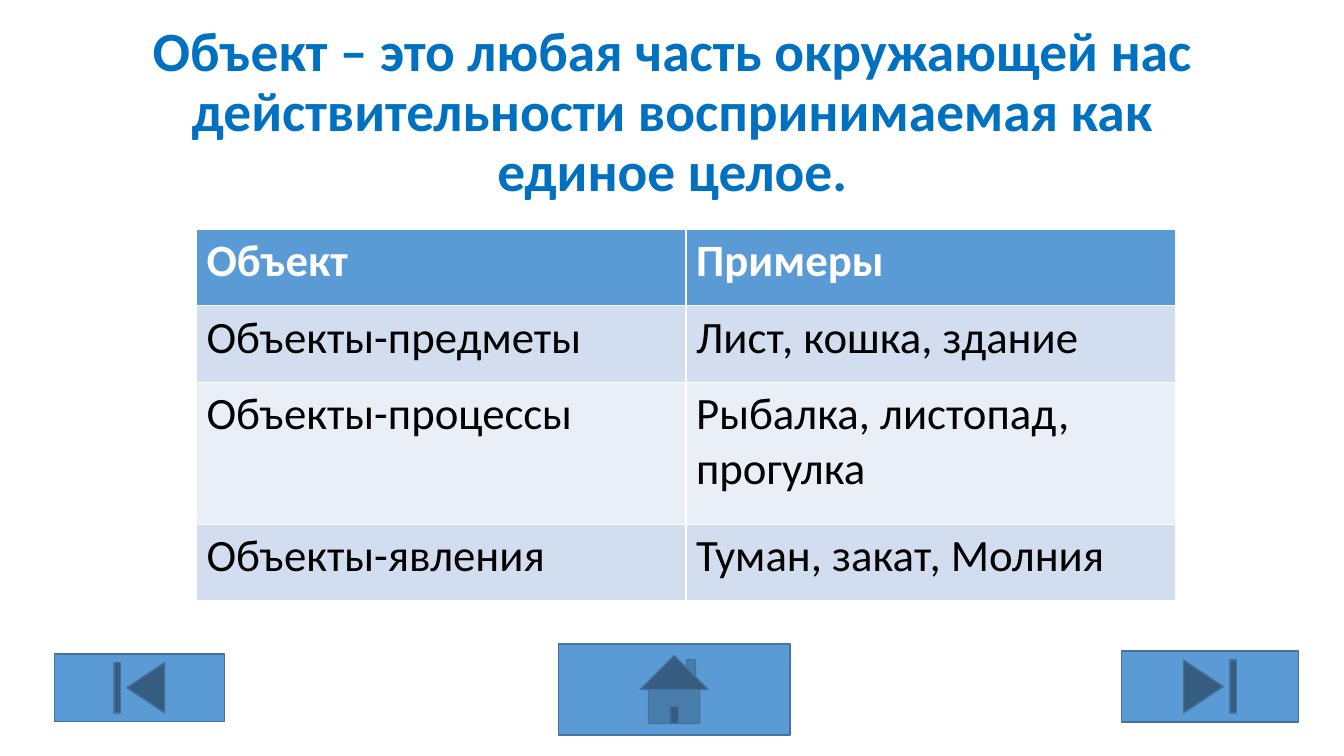
from pptx import Presentation
from pptx.dml.color import RGBColor
from pptx.enum.shapes import MSO_SHAPE
from pptx.enum.text import MSO_ANCHOR, MSO_AUTO_SIZE, PP_ALIGN
from pptx.util import Cm, Pt

HOME = MSO_SHAPE.ACTION_BUTTON_HOME
BEGINNING = MSO_SHAPE.ACTION_BUTTON_BEGINNING
END = MSO_SHAPE.ACTION_BUTTON_END
MIDDLE = MSO_ANCHOR.MIDDLE
CENTER = PP_ALIGN.CENTER
NO_AUTOFIT = MSO_AUTO_SIZE.NONE
TITLE_ONLY = 5

COLORS = {
    "title": "0070C0",
    "header": "5B9BD5",
    "header_text": "FFFFFF",
    "odd_row": "D2DEEF",
    "even_row": "EAEFF7",
    "text": "000000",
    "button": "5B9BD5",
    "button_line": "43739E",
}

DEFINITION = (
    "Объект – это любая часть окружающей нас "
    "действительности воспринимаемая как единое целое."
)
EXAMPLES = [
    ("Объект", "Примеры"),
    ("Объекты-предметы", "Лист, кошка, здание"),
    ("Объекты-процессы", "Рыбалка, листопад, прогулка"),
    ("Объекты-явления", "Туман, закат, Молния"),
]
ROW_HEIGHTS = [1.93, 1.93, 3.58, 1.93]
COLUMN_WIDTH = 12.34
BUTTONS = [
    (HOME, (14.07, 16.23, 5.84, 2.29)),
    (BEGINNING, (1.37, 16.48, 4.29, 1.7)),
    (END, (28.27, 16.41, 4.45, 1.78)),
]


class SlideBuilder:
    font = "Calibri"

    def __init__(self, slide):
        self.slide = slide

    def color(self, name):
        return RGBColor.from_string(COLORS[name])

    def fill(self, target, name):
        target.fill.solid()
        target.fill.fore_color.rgb = self.color(name)

    def add_text(self, paragraph, text, size, color, bold):
        run = paragraph.add_run()
        run.text = text
        run.font.name = self.font
        run.font.size = Pt(size)
        run.font.bold = bold
        run.font.color.rgb = self.color(color)

    def title(self, text, box):
        heading = self.slide.shapes.title
        heading.left, heading.top, heading.width, heading.height = map(Cm, box)
        frame = heading.text_frame
        frame.word_wrap = True
        frame.auto_size = NO_AUTOFIT
        frame.vertical_anchor = MIDDLE
        paragraph = frame.paragraphs[0]
        paragraph.alignment = CENTER
        paragraph.line_spacing = 0.9
        self.add_text(paragraph, text, 39.6, "title", True)

    def table(self, rows, left, top, column_width, row_heights):
        columns = len(rows[0])
        table = self.slide.shapes.add_table(
            len(rows), columns, Cm(left), Cm(top),
            Cm(column_width * columns), Cm(sum(row_heights)),
        ).table
        for column in table.columns:
            column.width = Cm(column_width)
        for number, (texts, height) in enumerate(zip(rows, row_heights)):
            table.rows[number].height = Cm(height)
            is_header = number == 0
            band = "odd_row" if number % 2 else "even_row"
            for index, text in enumerate(texts):
                cell = table.cell(number, index)
                self.fill(cell, "header" if is_header else band)
                self.add_text(
                    cell.text_frame.paragraphs[0], text, 32,
                    "header_text" if is_header else "text", is_header,
                )

    def button(self, kind, box):
        button = self.slide.shapes.add_shape(kind, *map(Cm, box))
        button.shadow.inherit = False
        self.fill(button, "button")
        button.line.color.rgb = self.color("button_line")
        button.line.width = Pt(1)


def main():
    deck = Presentation()
    deck.slide_width = Cm(33.87)
    deck.slide_height = Cm(19.05)
    slide = deck.slides.add_slide(deck.slide_layouts[TITLE_ONLY])
    builder = SlideBuilder(slide)
    builder.title(DEFINITION, (2.34, 1.02, 29.21, 3.68))
    builder.table(EXAMPLES, 4.95, 5.77, COLUMN_WIDTH, ROW_HEIGHTS)
    for kind, box in BUTTONS:
        builder.button(kind, box)
    deck.save("out.pptx")


if __name__ == "__main__":
    main()
